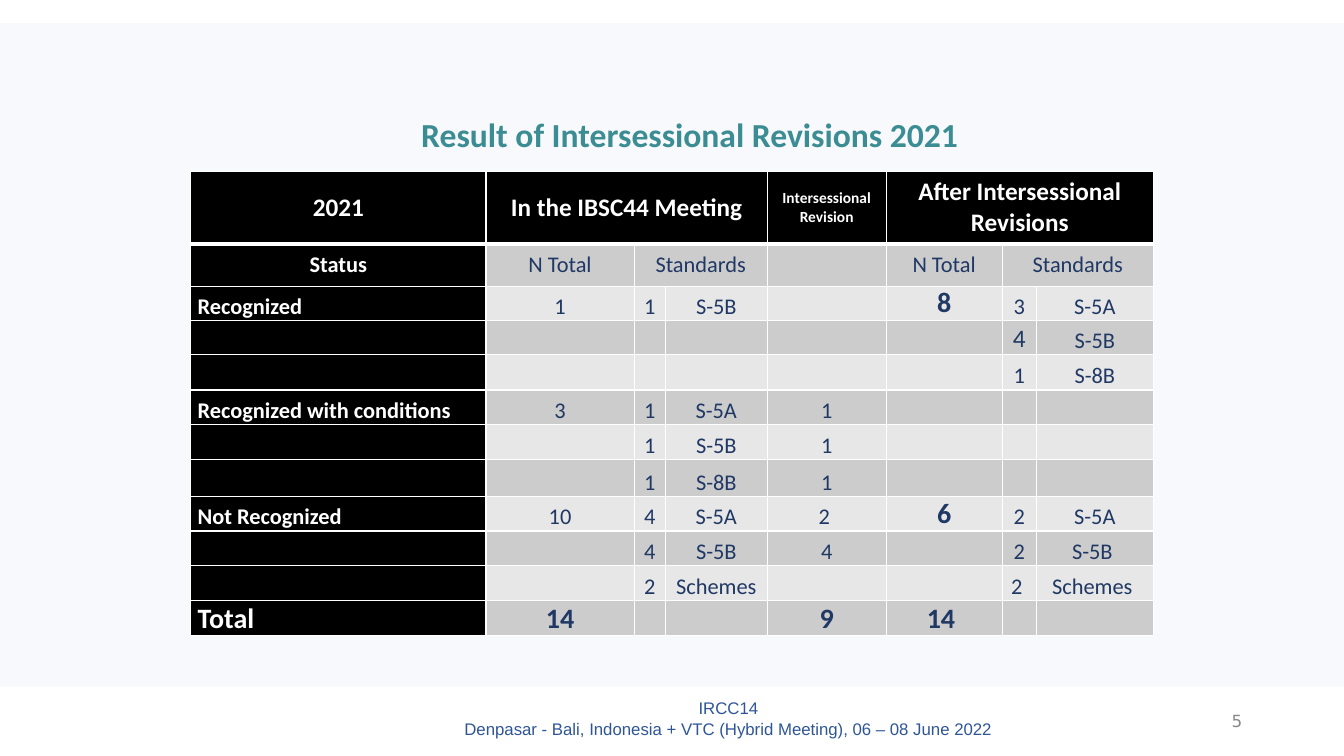
from lxml import etree
from pptx import Presentation
from pptx.dml.color import RGBColor
from pptx.enum import shapes, text
from pptx.oxml import ns
from pptx.util import Inches, Pt

WHITE = RGBColor(0xFF, 0xFF, 0xFF)
BLACK = RGBColor(0x00, 0x00, 0x00)
NAVY = RGBColor(0x20, 0x38, 0x64)
TEAL = RGBColor(0x3C, 0x8C, 0x93)
BLUE = RGBColor(0x2F, 0x55, 0x97)
GREY = RGBColor(0x89, 0x89, 0x89)
PALE_BLUE = RGBColor(0xDA, 0xE3, 0xF3)
DARK_BAND = RGBColor(0xCC, 0xCC, 0xCC)
LIGHT_BAND = RGBColor(0xE7, 0xE7, 0xE7)

LEFT, CENTER, RIGHT = text.PP_ALIGN.LEFT, text.PP_ALIGN.CENTER, text.PP_ALIGN.RIGHT
TOP, MIDDLE, BOTTOM = text.MSO_ANCHOR.TOP, text.MSO_ANCHOR.MIDDLE, text.MSO_ANCHOR.BOTTOM

COLUMNS = [2.93, 1.47, 0.31, 1.01, 1.18, 1.15, 0.34, 1.16]
HEIGHTS = [0.72, 0.42, 0.34, 0.34, 0.35, 0.34, 0.35, 0.37, 0.34, 0.34, 0.35, 0.35]
ROWS = [
    ["2021", "In the IBSC44 Meeting", "", "", "Intersessional Revision",
     "After Intersessional Revisions", "", ""],
    ["Status", "N Total", "Standards", "", "", "N Total", "Standards", ""],
    ["Recognized", "1", "1", "S-5B", "", "8", "3", "S-5A"],
    ["", "", "", "", "", "", "4", "S-5B"],
    ["", "", "", "", "", "", "1", "S-8B"],
    ["Recognized with conditions", "3", "1", "S-5A", "1", "", "", ""],
    ["", "", "1", "S-5B", "1", "", "", ""],
    ["", "", "1", "S-8B", "1", "", "", ""],
    ["Not Recognized", "10", "4", "S-5A", "2 ", "6", "2", "S-5A"],
    ["", "", "4", "S-5B", "4", "", "2", "S-5B "],
    ["", "", "2", "Schemes", "", "", "2 ", "Schemes "],
    ["Total", "14", "", "", "9", "14 ", "", ""],
]
# row, first column, last column
MERGES = [(0, 1, 3), (0, 5, 7), (1, 2, 3), (1, 6, 7)]
TOTAL_ROW = len(ROWS) - 1
REVISION_COL, AFTER_COL = 4, 5
SIZE_EXCEPTIONS = {(0, REVISION_COL): 11, (3, 6): 18}


def add_run(p, words, size, font, color, bold=False):
    r = p.add_run()
    r.text = words
    r.font.size, r.font.name, r.font.bold = Pt(size), font, bold
    r.font.color.rgb = color


def add_text(s, box, lines, size, font, color, align, anchor, bold=False):
    tf = s.shapes.add_textbox(*map(Inches, box)).text_frame
    tf.word_wrap, tf.vertical_anchor = True, anchor
    p = tf.paragraphs[0]
    p.alignment = align
    for i, line in enumerate(lines):
        if i:
            p.add_line_break()
        add_run(p, line, size, font, color, bold)


def add_band(s, box, color, opacity):
    sp = s.shapes.add_shape(shapes.MSO_SHAPE.RECTANGLE, *map(Inches, box))
    sp.shadow.inherit = False
    sp.line.fill.background()
    sp.fill.solid()
    sp.fill.fore_color.rgb = color
    clr = sp.fill._xPr.find(".//" + ns.qn("a:srgbClr"))
    etree.SubElement(clr, ns.qn("a:alpha")).set("val", str(opacity * 1000))


def set_borders(cell, row):
    tc_pr = cell._tc.get_or_add_tcPr()
    thick = {(0, "lnB"), (1, "lnT")}
    for side in ("lnL", "lnR", "lnT", "lnB"):
        ln = etree.SubElement(tc_pr, ns.qn("a:" + side))
        ln.set("w", str(Pt(3 if (row, side) in thick else 1)))
        fill = etree.SubElement(ln, ns.qn("a:solidFill"))
        etree.SubElement(fill, ns.qn("a:srgbClr")).set("val", str(WHITE))


def cell_size(row, col):
    if (row, col) in SIZE_EXCEPTIONS:
        return SIZE_EXCEPTIONS[row, col]
    if row == TOTAL_ROW or (row > 1 and col == AFTER_COL):
        return 20
    return 18 if row == 0 else 16


def fill_cell(cell, row, col, words):
    dark = row == 0 or col == 0
    set_borders(cell, row)
    cell.fill.solid()
    cell.fill.fore_color.rgb = BLACK if dark else (DARK_BAND if row % 2 else LIGHT_BAND)
    cell.margin_left = cell.margin_right = Inches(0.07)
    cell.margin_top = cell.margin_bottom = 0
    cell.vertical_anchor = MIDDLE if row < 2 else BOTTOM
    if words:
        p = cell.text_frame.paragraphs[0]
        p.alignment = LEFT if row > 1 and col == 0 else CENTER
        size = cell_size(row, col)
        add_run(p, words, size, "Calibri", WHITE if dark else NAVY, dark or size == 20)


def add_results_table(s, left, top):
    table = s.shapes.add_table(len(ROWS), len(COLUMNS), Inches(left), Inches(top),
                               Inches(sum(COLUMNS)), Inches(sum(HEIGHTS))).table
    for column, width in zip(table.columns, COLUMNS):
        column.width = Inches(width)
    for table_row, height in zip(table.rows, HEIGHTS):
        table_row.height = Inches(height)
    for row, first, last in MERGES:
        table.cell(row, first).merge(table.cell(row, last))
    for row, entries in enumerate(ROWS):
        for col, words in enumerate(entries):
            fill_cell(table.cell(row, col), row, col, words)


def main():
    prs = Presentation()
    prs.slide_width, prs.slide_height = Inches(13.33), Inches(7.5)
    s = prs.slides.add_slide(prs.slide_layouts[6])

    # Footer and background band
    add_text(s, (4.33, 6.9, 5.79, 0.45),
             ["IRCC14", "Denpasar - Bali, Indonesia + VTC (Hybrid Meeting), 06 – 08 June 2022"],
             12, "Arial", BLUE, CENTER, MIDDLE)
    add_band(s, (0, 0.23, 13.33, 6.58), PALE_BLUE, 21)

    # Slide number
    add_text(s, (9.42, 6.95, 3, 0.4), ["5"], 12, "DejaVu Sans", GREY, RIGHT, MIDDLE)

    # Results and their title
    add_results_table(s, 1.89, 1.7)
    add_text(s, (4.08, 1.08, 5.76, 0.98), ["Result of Intersessional Revisions 2021"],
             24, "Calibri", TEAL, LEFT, TOP, bold=True)

    prs.save("out.pptx")


if __name__ == "__main__":
    main()
